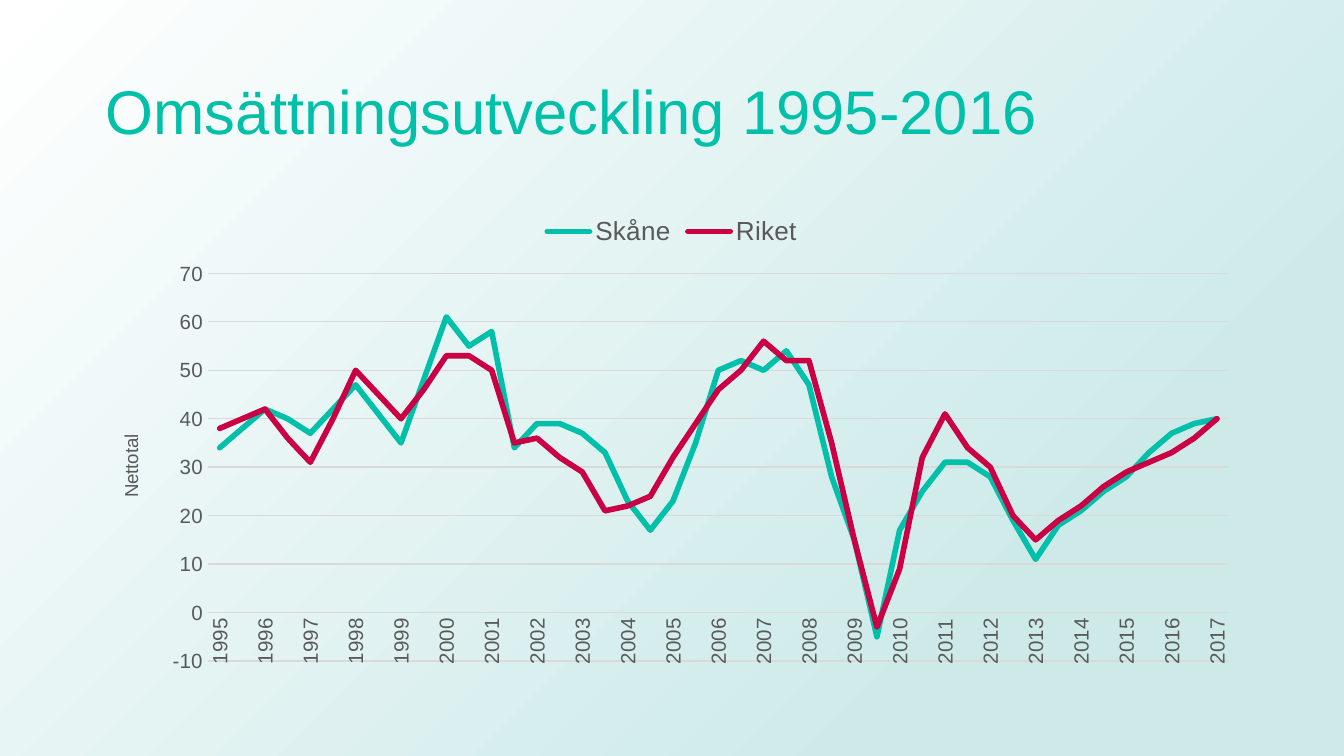
from lxml import etree
from pptx import Presentation
from pptx.chart.data import CategoryChartData
from pptx.dml.color import RGBColor
from pptx.enum.chart import XL_CHART_TYPE, XL_LEGEND_POSITION, XL_MARKER_STYLE, XL_TICK_MARK
from pptx.enum.shapes import MSO_SHAPE
from pptx.enum.text import MSO_ANCHOR, PP_ALIGN
from pptx.oxml import parse_xml
from pptx.oxml.ns import nsdecls, qn
from pptx.util import Pt

LINE_CHART = XL_CHART_TYPE.LINE
LEGEND_TOP = XL_LEGEND_POSITION.TOP
NO_MARKER = XL_MARKER_STYLE.NONE
NO_TICK = XL_TICK_MARK.NONE
RECTANGLE = MSO_SHAPE.RECTANGLE
MIDDLE = MSO_ANCHOR.MIDDLE
LEFT = PP_ALIGN.LEFT

TEAL = RGBColor(0x00, 0xC0, 0xA9)
CRIMSON = RGBColor(0xCB, 0x00, 0x44)
PALE_TEAL = RGBColor(0xCD, 0xEA, 0xE9)
WHITE = RGBColor(0xFF, 0xFF, 0xFF)
GRAY = RGBColor(0x59, 0x59, 0x59)
GRID_GRAY = RGBColor(0xD9, 0xD9, 0xD9)

PX = 9525  # EMU per px, 96 px to the inch
SLIDE_W, SLIDE_H = 960, 540
TITLE_BOX = (66, 29, 828, 105)
CHART_BOX = (66, 144, 828, 342)

# Two values a year, from 1995 to the start of 2017
HALF_YEARS = [str(1995 + half // 2) for half in range(45)]
SKANE = [34, 38, 42, 40, 37, 42, 47, 41, 35, 48, 61, 55, 58, 34, 39,
         39, 37, 33, 23, 17, 23, 35, 50, 52, 50, 54, 47, 28, 15, -5,
         17, 25, 31, 31, 28, 19, 11, 18, 21, 25, 28, 33, 37, 39, 40]
RIKET = [38, 40, 42, 36, 31, 40, 50, 45, 40, 46, 53, 53, 50, 35, 36,
         32, 29, 21, 22, 24, 32, 39, 46, 50, 56, 52, 52, 35, 15, -3,
         9, 32, 41, 34, 30, 20, 15, 19, 22, 26, 29, 31, 33, 36, 40]
SERIES = [("Skåne", SKANE, TEAL), ("Riket", RIKET, CRIMSON)]


def px(box):
    return [length * PX for length in box]


def style_font(font, size, color):
    font.name = "Arial"
    font.size = Pt(size)
    font.bold = False
    font.color.rgb = color


def write_text(frame, text, *, size, color, align=None, spacing=None):
    paragraph = frame.paragraphs[0]
    paragraph.alignment = align
    paragraph.line_spacing = spacing
    run = paragraph.add_run()
    run.text = text
    style_font(run.font, size, color)


def add_backdrop(slide):
    backdrop = slide.shapes.add_shape(RECTANGLE, *px((0, 0, SLIDE_W, SLIDE_H)))
    backdrop.shadow.inherit = False
    backdrop.line.fill.background()
    gradient = parse_xml(
        f'<a:gradFill {nsdecls("a")} rotWithShape="1"><a:gsLst>'
        f'<a:gs pos="23000"><a:srgbClr val="{PALE_TEAL}"/></a:gs>'
        f'<a:gs pos="100000"><a:srgbClr val="{WHITE}"/></a:gs></a:gsLst>'
        '<a:path path="circle"><a:fillToRect l="100000" t="100000"/></a:path>'
        '<a:tileRect r="-100000" b="-100000"/></a:gradFill>')
    backdrop.element.spPr.find(qn("a:prstGeom")).addnext(gradient)
    # Behind the title placeholder
    slide.shapes.title.element.addprevious(backdrop.element)


def add_title(slide, text):
    title = slide.shapes.title
    title.left, title.top, title.width, title.height = px(TITLE_BOX)
    title.text_frame.vertical_anchor = MIDDLE
    write_text(title.text_frame, text, size=33, color=TEAL, align=LEFT, spacing=0.9)


def make_layout(**settings):
    layout = etree.Element(qn("c:layout"))
    manual = etree.SubElement(layout, qn("c:manualLayout"))
    for name, value in settings.items():
        etree.SubElement(manual, qn(f"c:{name}")).set("val", str(value))
    return layout


def place_plot(chart):
    plot_area = chart.plots[0]._element.getparent()
    for layout in plot_area.findall(qn("c:layout")):
        plot_area.remove(layout)
    plot_area.insert(0, make_layout(layoutTarget="inner", xMode="edge", yMode="edge",
                                    x=0.1, y=0.15, w=0.88, h=0.81))


def format_series(series, color):
    series.smooth = False
    series.marker.style = NO_MARKER
    line = series.format.line
    line.width = Pt(3)
    line.color.rgb = color
    outline = series._element.spPr.find(qn("a:ln"))
    outline.set("cap", "rnd")
    etree.SubElement(outline, qn("a:round"))


def format_axis(axis):
    axis.major_tick_mark = axis.minor_tick_mark = NO_TICK
    style_font(axis.tick_labels.font, 11, GRAY)


def format_year_axis(axis):
    format_axis(axis)
    axis.format.line.color.rgb = GRID_GRAY
    axis.format.line.width = Pt(0.75)
    # One upright label a year
    axis._element.txPr.find(qn("a:bodyPr")).set("rot", "-5400000")
    skip = etree.Element(qn("c:tickLblSkip"))
    skip.set("val", "2")
    axis._element.find(qn("c:noMultiLvlLbl")).addprevious(skip)


def format_value_axis(axis):
    format_axis(axis)
    axis.minimum_scale, axis.maximum_scale, axis.major_unit = -10, 70, 10
    axis.tick_labels.number_format = "0"
    axis.tick_labels.number_format_is_linked = False
    axis.format.line.fill.background()
    grid = axis.major_gridlines.format.line
    grid.color.rgb = GRID_GRAY
    grid.width = Pt(0.75)
    # Axis title
    frame = axis.axis_title.text_frame
    write_text(frame, "Nettotal", size=10, color=GRAY)
    frame._txBody.find(qn("a:bodyPr")).set("rot", "-5400000")
    title = axis.axis_title._element
    for layout in title.findall(qn("c:layout")):
        title.remove(layout)
    title.find(qn("c:tx")).addnext(
        make_layout(xMode="edge", yMode="edge", x=0.02, y=0.48))


def add_turnover_chart(slide):
    turnover = CategoryChartData(number_format="0")
    turnover.categories = HALF_YEARS
    for name, values, _ in SERIES:
        turnover.add_series(name, values)
    chart = slide.shapes.add_chart(LINE_CHART, *px(CHART_BOX), turnover).chart
    chart.has_title = False
    style_font(chart.font, 10, GRAY)
    chart.plots[0].vary_by_categories = False
    for series, (_, _, color) in zip(chart.plots[0].series, SERIES):
        format_series(series, color)
    format_year_axis(chart.category_axis)
    format_value_axis(chart.value_axis)
    place_plot(chart)
    # Legend
    chart.has_legend = True
    chart.legend.position = LEGEND_TOP
    chart.legend.include_in_layout = False
    style_font(chart.legend.font, 14, GRAY)


def main():
    deck = Presentation()
    deck.slide_width, deck.slide_height = px((SLIDE_W, SLIDE_H))
    slide = deck.slides.add_slide(deck.slide_layouts[5])
    add_backdrop(slide)
    add_title(slide, "Omsättningsutveckling 1995-2016")
    add_turnover_chart(slide)
    deck.save("out.pptx")


if __name__ == "__main__":
    main()
